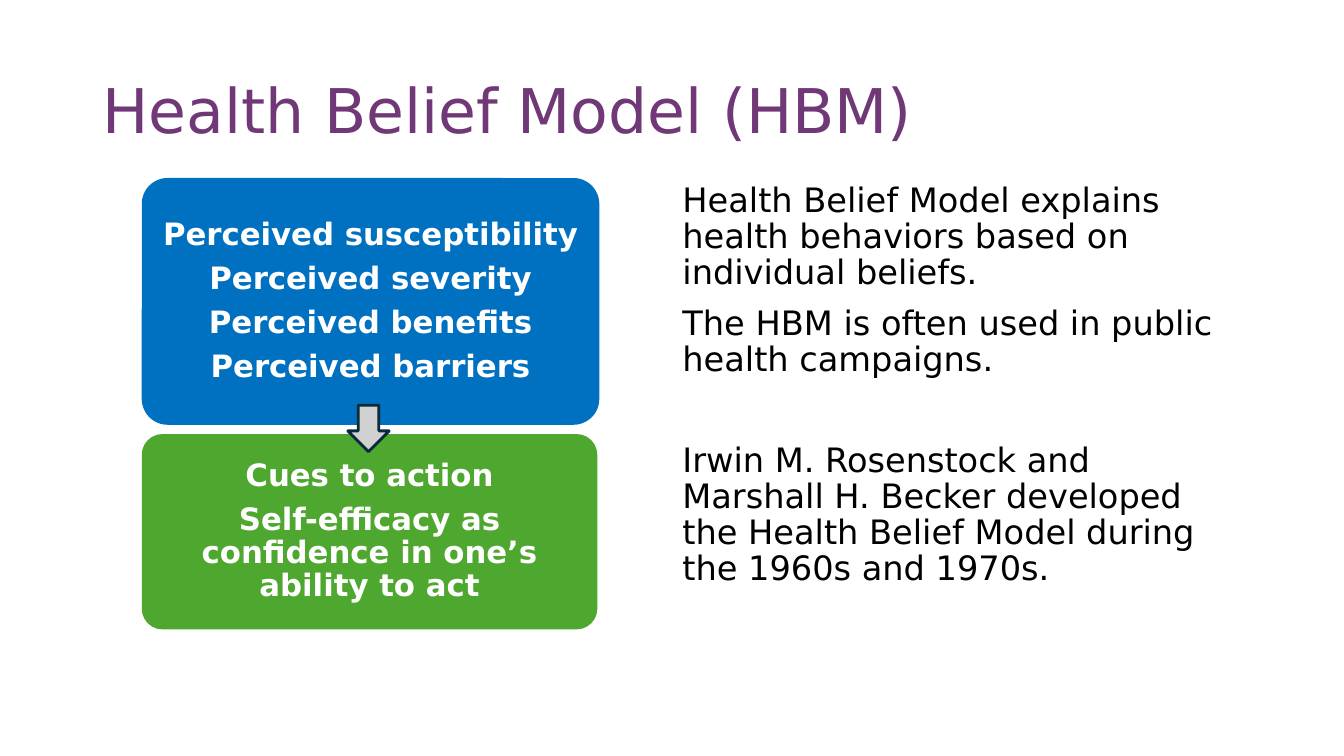
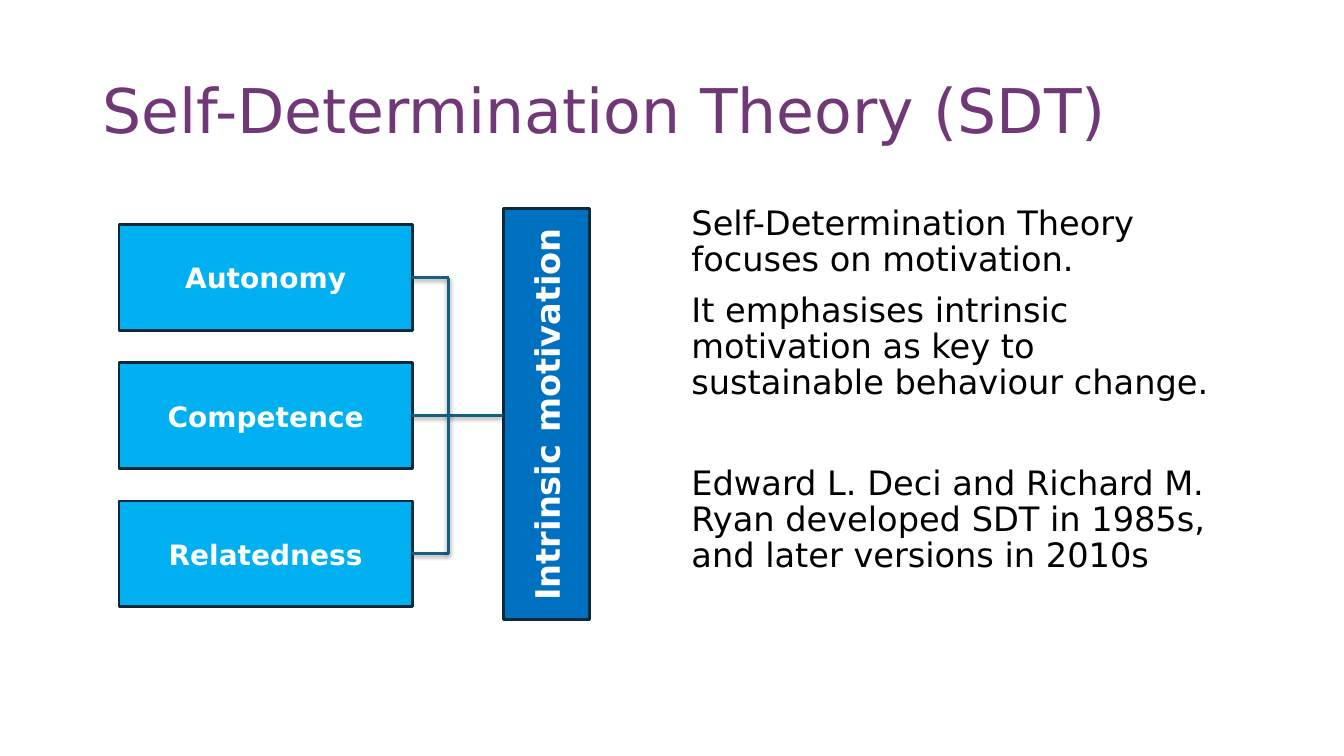
"""Build two slides on health behaviour theories."""
from dataclasses import dataclass

from lxml.etree import SubElement
from pptx import Presentation
from pptx.dml.color import RGBColor
from pptx.enum.shapes import MSO_CONNECTOR, MSO_SHAPE
from pptx.enum.text import MSO_ANCHOR, PP_ALIGN
from pptx.oxml.ns import qn
from pptx.shapes.autoshape import Shape
from pptx.slide import Slide
from pptx.text.text import TextFrame
from pptx.util import Inches, Pt

FONT = "DejaVu Sans"
PURPLE = "703876"
BLACK = "000000"
WHITE = "FFFFFF"
BLUE = "0070C0"
SKY = "00B0F0"
GREEN = "4EA72E"
GREY = "D1D1D1"
NAVY = "092A39"
TEAL = "156082"
LINE_WIDTH = 2
BODY_SIZE = 24
BODY_GAP = 10
SOURCE_GAP = 46


@dataclass(frozen=True)
class Area:
    left: float
    top: float
    width: float
    height: float

    @property
    def right(self) -> float:
        return self.left + self.width

    @property
    def middle(self) -> float:
        return self.top + self.height / 2

    def lengths(self) -> list[Inches]:
        return [Inches(v) for v in (self.left, self.top, self.width, self.height)]


@dataclass(frozen=True)
class Block:
    area: Area
    fill: str
    outline: str
    size: int = 20
    lines: tuple[str, ...] = ()
    kind: MSO_SHAPE = MSO_SHAPE.RECTANGLE
    spacing: float = 1.0
    gap: float = 0


TITLE_AREA = Area(0.92, 0.4, 12.1, 1.45)


def rgb(value: str) -> RGBColor:
    return RGBColor.from_string(value)


def write(frame: TextFrame, lines: tuple[str, ...], size: int, color: str,
          bold: bool = False, align: PP_ALIGN = PP_ALIGN.LEFT,
          spacing: float = 0.9, before: tuple[float, ...] = (),
          after: float = 0) -> None:
    frame.word_wrap = True
    for index, line in enumerate(lines):
        paragraph = frame.add_paragraph() if index else frame.paragraphs[0]
        paragraph.text = line
        paragraph.alignment = align
        paragraph.line_spacing = spacing
        paragraph.space_after = Pt(after)
        if before:
            paragraph.space_before = Pt(before[index])
        font = paragraph.font
        font.name, font.size, font.bold = FONT, Pt(size), bold
        font.color.rgb = rgb(color)


def add_title(slide: Slide, title: str) -> None:
    frame = slide.shapes.add_textbox(*TITLE_AREA.lengths()).text_frame
    frame.vertical_anchor = MSO_ANCHOR.MIDDLE
    write(frame, (title,), 44, PURPLE)


def add_body(slide: Slide, area: Area, summary: str, use: str, authors: str) -> None:
    frame = slide.shapes.add_textbox(*area.lengths()).text_frame
    write(frame, (summary, use, authors), BODY_SIZE, BLACK,
          before=(0, BODY_GAP, SOURCE_GAP))


def add_block(slide: Slide, block: Block) -> Shape:
    shape = slide.shapes.add_shape(block.kind, *block.area.lengths())
    shape.shadow.inherit = False
    shape.fill.solid()
    shape.fill.fore_color.rgb = rgb(block.fill)
    shape.line.color.rgb = rgb(block.outline)
    shape.line.width = Pt(LINE_WIDTH)
    if block.kind == MSO_SHAPE.ROUNDED_RECTANGLE:
        shape.adjustments[0] = 0.1
    frame = shape.text_frame
    frame.margin_left = frame.margin_right = Inches(0.08)
    frame.vertical_anchor = MSO_ANCHOR.MIDDLE
    write(frame, block.lines, block.size, WHITE, True, PP_ALIGN.CENTER,
          block.spacing, after=block.gap)
    return shape


def add_link(slide: Slide, x1: float, y1: float, x2: float, y2: float) -> None:
    link = slide.shapes.add_connector(
        MSO_CONNECTOR.STRAIGHT, Inches(x1), Inches(y1), Inches(x2), Inches(y2))
    link.line.color.rgb = rgb(TEAL)
    link.line.width = Pt(LINE_WIDTH)
    effects = SubElement(link._element.spPr, qn("a:effectLst"))
    shadow = SubElement(effects, qn("a:outerShdw"), blurRad="40000",
                        dist="20000", dir="5400000", rotWithShape="0")
    color = SubElement(shadow, qn("a:srgbClr"), val=BLACK)
    SubElement(color, qn("a:alpha"), val="38000")


def build_health_belief(slide: Slide) -> None:
    add_title(slide, "Health Belief Model (HBM)")
    add_body(
        slide, Area(6.67, 1.77, 5.75, 4.76),
        "Health Belief Model explains health behaviors based on individual beliefs.",
        "The HBM is often used in public health campaigns.",
        "Irwin M. Rosenstock and Marshall H. Becker developed the Health Belief "
        "Model during the 1960s and 1970s.")
    perceptions = ("Perceived susceptibility", "Perceived severity",
                   "Perceived benefits", "Perceived barriers")
    actions = ("Cues to action",
               "Self-efficacy as confidence in one’s ability to act")
    for area, color, lines in (
            (Area(1.42, 1.78, 4.51, 2.42), BLUE, perceptions),
            (Area(1.42, 4.32, 4.49, 1.91), GREEN, actions)):
        add_block(slide, Block(area, color, color, 22, lines,
                               MSO_SHAPE.ROUNDED_RECTANGLE, 0.9, 7.7))
    add_block(slide, Block(Area(3.45, 4.02, 0.41, 0.46), GREY, NAVY,
                           kind=MSO_SHAPE.DOWN_ARROW))


def build_self_determination(slide: Slide) -> None:
    add_title(slide, "Self-Determination Theory (SDT)")
    needs = [Area(1.18, 2.23 + 1.37 * row, 2.91, 1.05) for row in range(3)]
    for area, need in zip(needs, ("Autonomy", "Competence", "Relatedness")):
        add_block(slide, Block(area, SKY, NAVY, lines=(need,)))
    outcome = Area(4.99, 2.07, 0.86, 4.08)
    motivation = add_block(slide, Block(outcome, BLUE, NAVY, 24,
                                        ("Intrinsic motivation",)))
    motivation.text_frame._txBody.bodyPr.set("vert", "vert270")
    trunk = 4.45
    first, central, last = needs
    for area, end in ((first, trunk), (central, outcome.left), (last, trunk)):
        add_link(slide, area.right, area.middle, end, area.middle)
    add_link(slide, trunk, first.middle, trunk, last.middle)
    add_body(
        slide, Area(6.76, 2, 5.54, 4.76),
        "Self-Determination Theory focuses on motivation.",
        "It emphasises intrinsic motivation as key to sustainable behaviour change.",
        "Edward L. Deci and Richard M. Ryan developed SDT in 1985s, and later "
        "versions in 2010s")


def main() -> None:
    deck = Presentation()
    deck.slide_width, deck.slide_height = Inches(13.33), Inches(7.5)
    for build in (build_health_belief, build_self_determination):
        build(deck.slides.add_slide(deck.slide_layouts[6]))
    deck.save("out.pptx")


if __name__ == "__main__":
    main()
